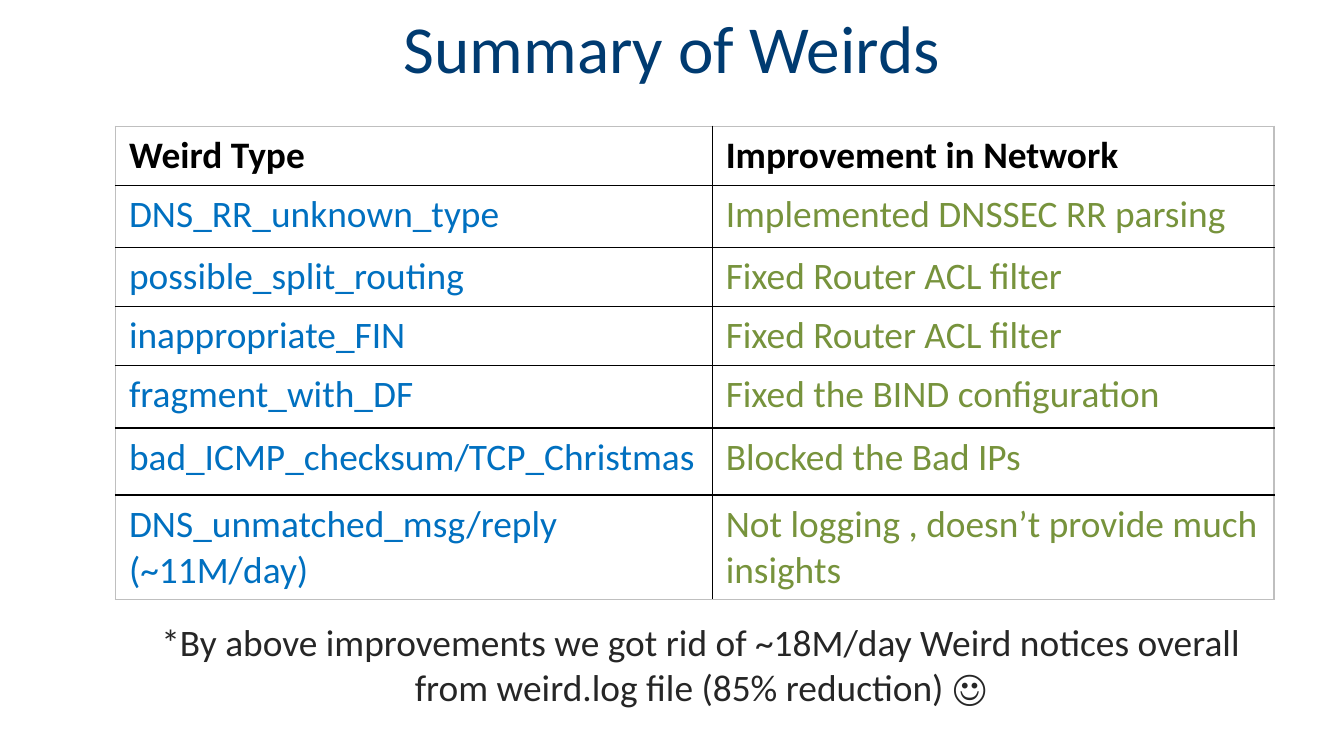
from lxml.etree import SubElement
from pptx import Presentation
from pptx.dml.color import RGBColor
from pptx.enum.text import MSO_ANCHOR, PP_ALIGN
from pptx.oxml.ns import qn
from pptx.util import Pt

FONT = "Calibri"
NAVY = RGBColor(0x00, 0x3B, 0x71)
BLACK = RGBColor(0x00, 0x00, 0x00)
BLUE = RGBColor(0x00, 0x70, 0xC0)
GREEN = RGBColor(0x77, 0x93, 0x3C)
CHARCOAL = RGBColor(0x26, 0x26, 0x26)
GREY = RGBColor(0xBF, 0xBF, 0xBF)

COLUMN_WIDTHS = (319.7, 301)
ROW_HEIGHTS = (31.6, 33.4, 31.6, 31.6, 33.4, 36, 56)
WEIRDS = (
    ("Weird Type", "Improvement in Network"),
    ("DNS_RR_unknown_type", "Implemented DNSSEC RR parsing"),
    ("possible_split_routing", "Fixed Router ACL filter"),
    ("inappropriate_FIN", "Fixed Router ACL filter"),
    ("fragment_with_DF", "Fixed the BIND configuration"),
    ("bad_ICMP_checksum/TCP_Christmas", "Blocked the Bad IPs"),
    ("DNS_unmatched_msg/reply (~11M/day)",
     "Not logging , doesn’t provide much insights"),
)


def style(paragraph, size, color, bold=False):
    font = paragraph.font
    font.name, font.size, font.bold = FONT, Pt(size), bold
    font.color.rgb = color


def add_centred_text(slide, box, text, size, color):
    frame = slide.shapes.add_textbox(*map(Pt, box)).text_frame
    frame.word_wrap = True
    frame.vertical_anchor = MSO_ANCHOR.TOP
    paragraph = frame.paragraphs[0]
    paragraph.text = text
    paragraph.alignment = PP_ALIGN.CENTER
    style(paragraph, size, color)


def set_borders(cell, edges):
    """Draw 1 pt lines; edges pairs each line tag with its colour."""
    properties = cell._tc.get_or_add_tcPr()
    for tag, color in edges:
        line = SubElement(properties, qn(tag), w=str(Pt(1)))
        fill = SubElement(line, qn("a:solidFill"))
        SubElement(fill, qn("a:srgbClr"), val=str(color))


def add_weirds_table(slide, left, top):
    rows, columns = len(WEIRDS), len(COLUMN_WIDTHS)
    table = slide.shapes.add_table(
        rows, columns, Pt(left), Pt(top),
        Pt(sum(COLUMN_WIDTHS)), Pt(sum(ROW_HEIGHTS))).table
    table.first_row = table.horz_banding = False
    for column, width in zip(table.columns, COLUMN_WIDTHS):
        column.width = Pt(width)
    for row, height in zip(table.rows, ROW_HEIGHTS):
        row.height = Pt(height)

    for r, texts in enumerate(WEIRDS):
        for c, text in enumerate(texts):
            cell = table.cell(r, c)
            # Grey frame around the table, black lines inside
            set_borders(cell, (
                ("a:lnL", GREY if c == 0 else BLACK),
                ("a:lnR", GREY if c == columns - 1 else BLACK),
                ("a:lnT", GREY if r == 0 else BLACK),
                ("a:lnB", GREY if r == rows - 1 else BLACK)))
            cell.fill.background()
            cell.text = text
            color = BLACK if r == 0 else (BLUE, GREEN)[c]
            style(cell.text_frame.paragraphs[0], 20, color, bold=r == 0)


def main():
    deck = Presentation()
    deck.slide_width, deck.slide_height = Pt(720), Pt(405)
    slide = deck.slides.add_slide(deck.slide_layouts[6])

    # Title
    add_centred_text(slide, (14.4, 0, 691.2, 67.7), "Summary of Weirds", 36, NAVY)
    # Weird types and their fixes
    add_weirds_table(slide, 61.9, 67.7)
    # Closing remark
    add_centred_text(
        slide, (61.9, 328.3, 627.1, 41),
        "*By above improvements we got rid of ~18M/day Weird notices overall "
        "from weird.log file (85% reduction) ☺", 20, CHARCOAL)

    deck.save("out.pptx")


if __name__ == "__main__":
    main()
